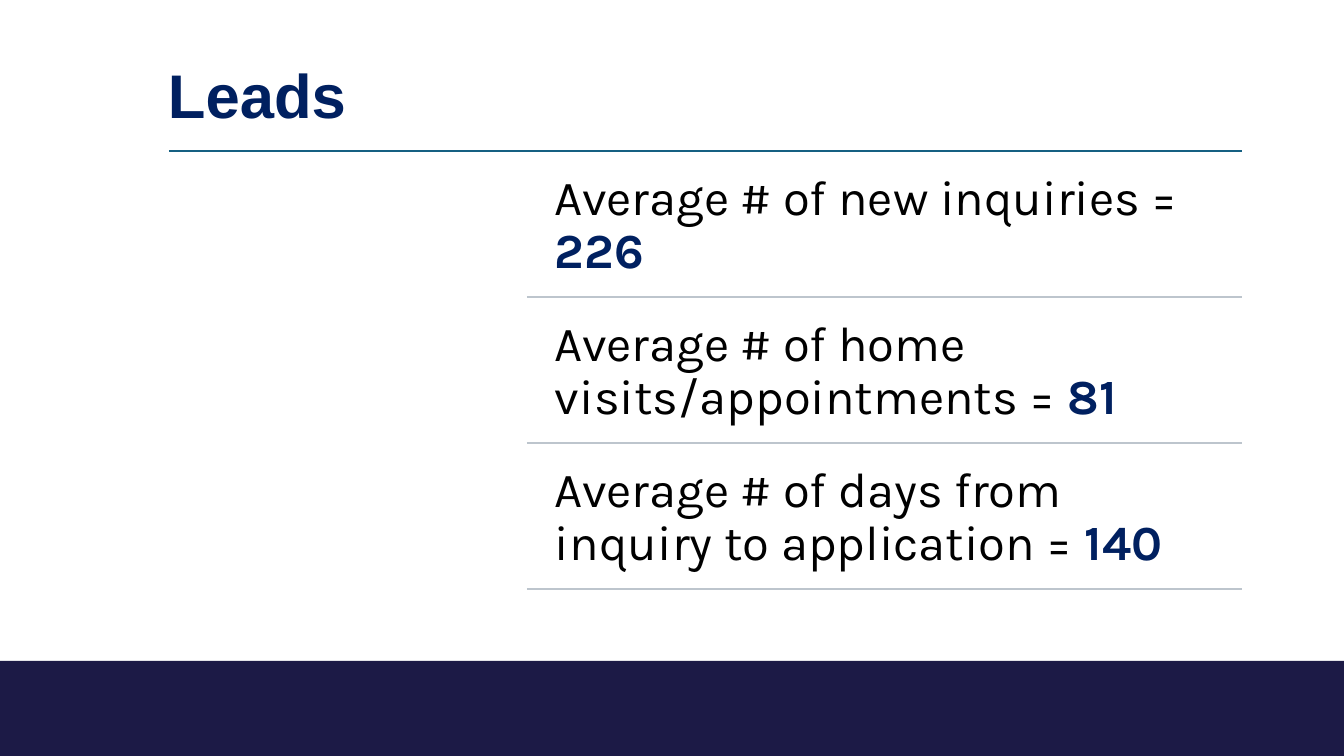
from lxml.etree import SubElement
from pptx import Presentation
from pptx.dml.color import RGBColor
from pptx.enum.shapes import MSO_CONNECTOR, MSO_SHAPE
from pptx.enum.text import MSO_ANCHOR, MSO_AUTO_SIZE, PP_ALIGN
from pptx.oxml.ns import qn
from pptx.util import Pt

PX = 914400 / 100.8
NAVY = RGBColor(0x00, 0x20, 0x60)
BLACK = RGBColor(0x00, 0x00, 0x00)
TEAL = RGBColor(0x15, 0x60, 0x82)
GREY = RGBColor(0xBD, 0xC5, 0xCD)
FOOTER_NAVY = RGBColor(0x1C, 0x1A, 0x46)

RIGHT = 1242
TOP_RULE = 151
ROW_HEIGHT = 146
METRICS = [
    ("Average # of new inquiries = ", "226"),
    ("Average # of home visits/appointments = ", "81"),
    ("Average # of days from inquiry to application = ", "140"),
]


def px(*lengths):
    return [round(length * PX) for length in lengths]


def write(frame, text, strong="", *, font, size, color=BLACK, inset=10,
          anchor=MSO_ANCHOR.TOP):
    """Fill a frame with one paragraph: plain text, then a bold navy part."""
    frame.word_wrap = True
    frame.auto_size = MSO_AUTO_SIZE.NONE
    frame.vertical_anchor = anchor
    frame.margin_left, frame.margin_right = px(inset, inset)
    frame.margin_top, frame.margin_bottom = px(inset, inset)
    paragraph = frame.paragraphs[0]
    paragraph.alignment = PP_ALIGN.LEFT
    paragraph.line_spacing = 0.9
    for part, part_color, bold in ((text, color, False), (strong, NAVY, True)):
        if part:
            run = paragraph.add_run()
            run.text = part
            run.font.name = font
            run.font.size = Pt(size)
            run.font.bold = bold
            run.font.color.rgb = part_color


deck = Presentation()
deck.slide_width, deck.slide_height = px(1344, 756)
slide = deck.slides.add_slide(deck.slide_layouts[5])
shapes = slide.shapes

footer = shapes.add_shape(MSO_SHAPE.RECTANGLE, *px(0, 661, 1344, 95))
footer.shadow.inherit = False
footer.fill.solid()
footer.fill.fore_color.rgb = FOOTER_NAVY
footer.line.fill.background()

title = shapes.title
title.left, title.top, title.width, title.height = px(158, 26, 1159, 146)
write(title.text_frame, "", "Leads", font="Arial", size=44,
      anchor=MSO_ANCHOR.MIDDLE)

for row, (label, value) in enumerate(METRICS):
    metric = shapes.add_textbox(
        *px(540, TOP_RULE + 7 + row * ROW_HEIGHT, 702, 139))
    write(metric.text_frame, label, value, font="Karla", size=35, inset=15)

rules = [(169, TEAL)] + [(527, GREY)] * len(METRICS)
for row, (left, color) in enumerate(rules):
    y = TOP_RULE + row * ROW_HEIGHT
    rule = shapes.add_connector(MSO_CONNECTOR.STRAIGHT, *px(left, y, RIGHT, y))
    rule.line.color.rgb = color
    rule.line.width = Pt(1.5)
    SubElement(rule._element.spPr, qn("a:effectLst"))

deck.save("out.pptx")
